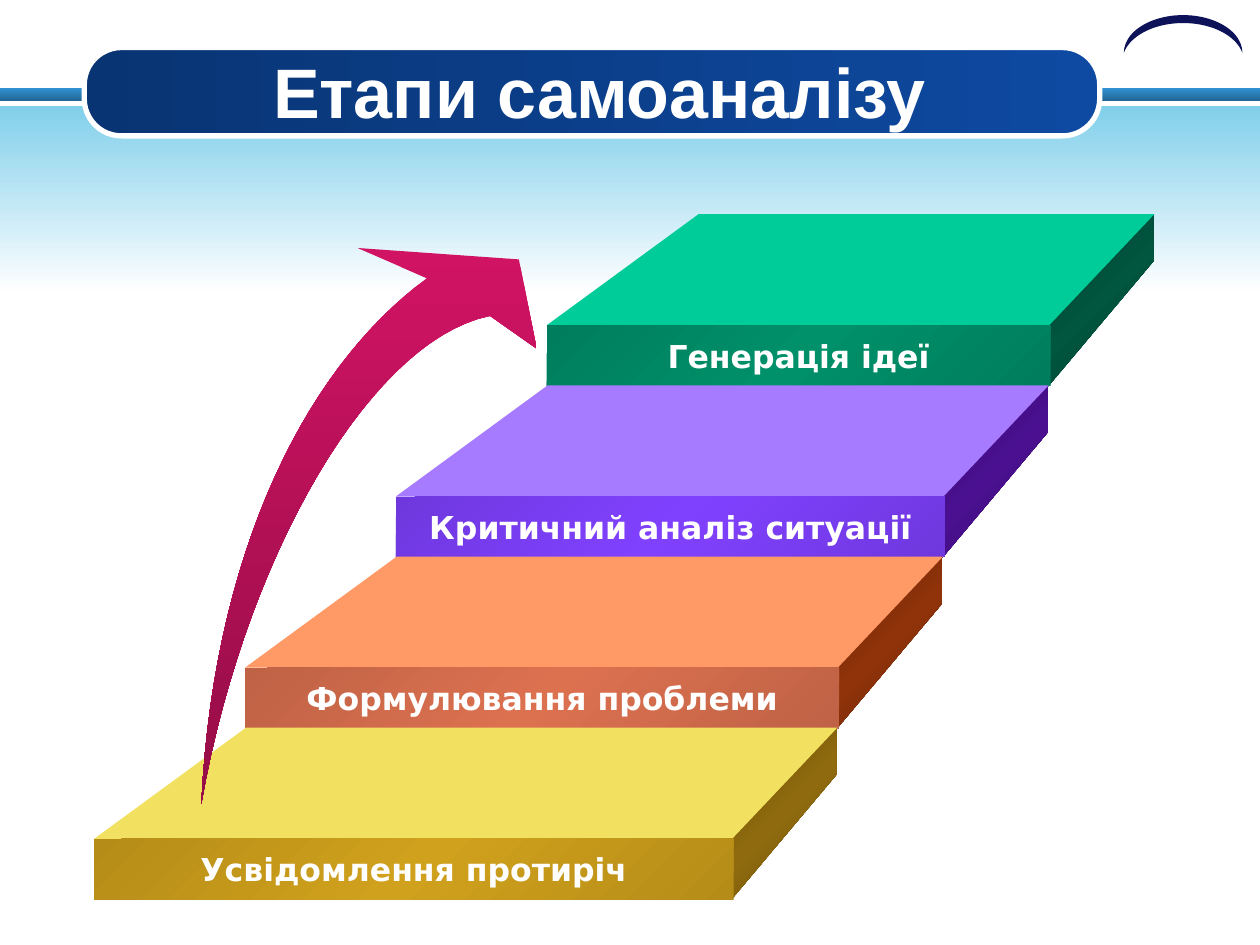
import pptx
import pptx.util
import pptx.dml.color
import pptx.enum.shapes
import pptx.enum.text
import pptx.oxml.ns
from lxml import etree

Cm, Pt = pptx.util.Cm, pptx.util.Pt
RGB = pptx.dml.color.RGBColor.from_string
SHAPE = pptx.enum.shapes.MSO_SHAPE
qn = pptx.oxml.ns.qn

COLORS = {
    "white": "FFFFFF", "bar": "3191D3", "sky": "81CFEB", "title": "0E4AA2",
    "moon": "0D1259", "arrow": "D11364",
}
# From the highest step to the lowest: label, top, front and side colours
STEPS = [
    ("Генерація ідеї", "00CC99", "00906A", "00563F"),
    ("Критичний аналіз ситуації", "A77BFF", "8041FF", "4B1092"),
    ("Формулювання проблеми", "FF9966", "DC7150", "90330A"),
    ("Усвідомлення протиріч", "F2E160", "D0A11C", "906B0E"),
]
FRONT_SHADE, DEEP_SHADE = 73, 46


def gradient(sp, stops, angle):
    """Fill with (position, colour, shade) stops, all but colour in percent."""
    sp.fill.gradient()
    sp.fill.gradient_angle = (360 - angle) % 360
    gs_list = next(sp._element.iter(qn("a:gsLst")))
    for gs in list(gs_list):
        gs_list.remove(gs)
    for pos, color, shade in stops:
        gs = etree.SubElement(gs_list, qn("a:gs"), pos=str(pos * 1000))
        clr = etree.SubElement(gs, qn("a:srgbClr"), val=color)
        if shade < 100:
            etree.SubElement(clr, qn("a:shade"), val=str(shade * 1000))


def glow(sp, color, shade):
    """Diagonal gradient that is bright in the middle and dark at both ends."""
    gradient(sp, [(0, color, shade), (50, color, 100), (100, color, shade)], 45)


def solid(sp, color):
    sp.fill.solid()
    sp.fill.fore_color.rgb = RGB(color)


def add_preset(s, kind, x, y, w, h):
    sp = s.shapes.add_shape(kind, Cm(x), Cm(y), Cm(w), Cm(h))
    sp.shadow.inherit = False
    sp.line.fill.background()
    return sp


def add_polygon(s, x, y, points):
    """Closed outline through points given relative to (x, y)."""
    pts = [(Cm(x + dx), Cm(y + dy)) for dx, dy in points]
    builder = s.shapes.build_freeform(*pts[0])
    builder.add_line_segments(pts[1:], close=True)
    sp = builder.convert_to_shape()
    sp.shadow.inherit = False
    sp.line.fill.background()
    return sp


def write(sp, text, font, size, wrap):
    tf = sp.text_frame
    tf.word_wrap = wrap
    tf.vertical_anchor = pptx.enum.text.MSO_ANCHOR.MIDDLE
    p = tf.paragraphs[0]
    p.alignment = pptx.enum.text.PP_ALIGN.CENTER
    r = p.add_run()
    r.text = text
    r.font.name, r.font.size, r.font.bold = font, Pt(size), True
    r.font.color.rgb = RGB(COLORS["white"])


def curve(p0, p1, p2, p3, n=30):
    """Points on a cubic Bezier curve."""
    def at(t, axis):
        u = 1 - t
        return (u ** 3 * p0[axis] + 3 * u * u * t * p1[axis]
                + 3 * u * t * t * p2[axis] + t ** 3 * p3[axis])
    return [(at(i / n, 0), at(i / n, 1)) for i in range(n + 1)]


def header(s, x, y, w):
    bar = add_preset(s, SHAPE.RECTANGLE, x, y + 1.78, w, 0.25)
    gradient(bar, [(0, COLORS["bar"], 100), (100, COLORS["bar"], DEEP_SHADE)], 90)
    sky = add_preset(s, SHAPE.RECTANGLE, x, y + 2.13, w, 3.78)
    gradient(sky, [(0, COLORS["sky"], 100), (100, COLORS["white"], 100)], 90)

    plate = add_preset(s, SHAPE.ROUNDED_RECTANGLE, x + 1.7, y + 0.96, 20.47, 1.78)
    plate.adjustments[0] = 0.42
    gradient(plate, [(0, COLORS["title"], DEEP_SHADE), (100, COLORS["title"], 100)], 0)
    plate.line.color.rgb = RGB(COLORS["white"])
    plate.line.width = Pt(3)

    moon = add_preset(s, SHAPE.MOON, x + 23.47, y - 0.51, 0.76, 2.39)
    moon.rotation = 90
    moon.adjustments[0] = 0.21
    solid(moon, COLORS["moon"])

    title = s.shapes.add_textbox(Cm(x + 2.34), Cm(y + 1.04), Cm(19.48), Cm(1.57))
    write(title, "Етапи самоаналізу", "Arial", 40, True)


def step(s, x, y, w, h, label, top_color, front_color, side_color):
    """One slab whose front face fills the given box."""
    depth, rise, lean = 2.12, 2.24, 3.06
    side = add_polygon(s, x + w - 0.05, y, [
        (0, 0), (depth, -rise), (depth, -1.29), (0, h)])
    glow(side, side_color, DEEP_SHADE)
    top = add_polygon(s, x, y, [
        (0, 0), (lean, -rise), (w + depth - 0.03, -rise), (w - 0.03, 0)])
    solid(top, top_color)
    front = add_preset(s, SHAPE.RECTANGLE, x, y, w, h)
    glow(front, front_color, FRONT_SHADE)
    write(front, label, "DejaVu Sans", 18, False)


def staircase(s, x, y):
    """Steps going down to the left; (x, y) is the front corner of the highest."""
    for i, parts in enumerate(STEPS):
        step(s, x - 3.04 * i, y + 3.45 * i, 10.16 + 0.91 * i, 1.23, *parts)


def rising_arrow(s, x, y):
    tail = (0, 11.2)
    outer = curve(tail, (0.25, 6.05), (2.16, 2.36), (4.55, 0.61))
    inner = curve((5.82, 1.37), (3.43, 1.85), (0.89, 6.17), tail)
    head = [(3.15, 0), (6.4, 0.23), (6.76, 2.03)]
    arrow = add_polygon(s, x, y, outer + head + inner[:-1])
    gradient(arrow, [(0, COLORS["arrow"], 100), (100, COLORS["arrow"], DEEP_SHADE)], 90)


def main():
    prs = pptx.Presentation()
    prs.slide_width, prs.slide_height = Cm(25.4), Cm(19.05)
    s = prs.slides.add_slide(prs.slide_layouts[6])
    header(s, 0, 0, 25.4)
    staircase(s, 11.02, 6.56)
    rising_arrow(s, 4.06, 5)
    prs.save("out.pptx")


if __name__ == "__main__":
    main()
